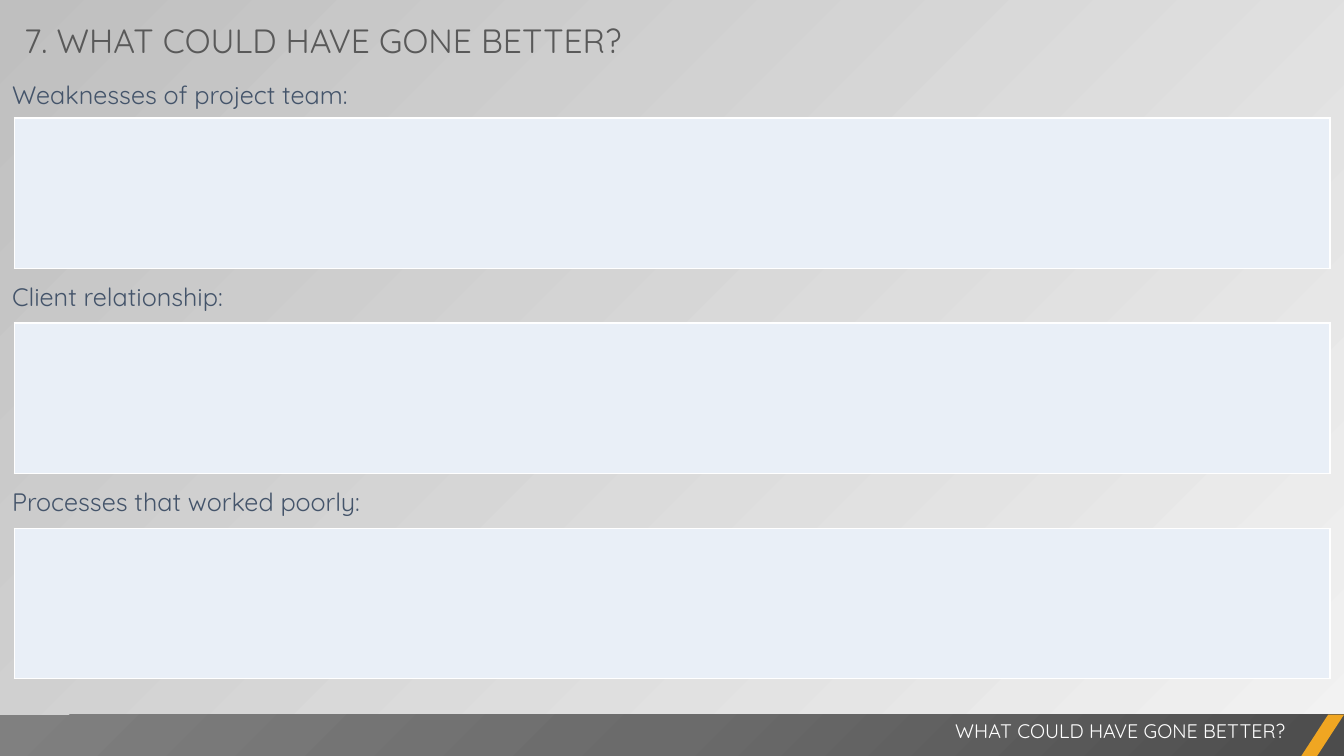
"""Build the project review slide on what could have gone better."""
import pptx
import pptx.dml.color
import pptx.enum.shapes
import pptx.enum.text
import pptx.oxml
import pptx.oxml.ns
import pptx.util
from pptx.util import Inches

RGBColor = pptx.dml.color.RGBColor
Align = pptx.enum.text.PP_ALIGN
Shape = pptx.enum.shapes.MSO_SHAPE

WHITE = RGBColor(0xFF, 0xFF, 0xFF)
LIGHT_GREY = RGBColor(0xF2, 0xF2, 0xF2)
SILVER = RGBColor(0xBF, 0xBF, 0xBF)
TITLE_GREY = RGBColor(0x59, 0x59, 0x59)
LABEL_BLUE = RGBColor(0x44, 0x54, 0x6A)
ANSWER_BLUE = RGBColor(0xE9, 0xEF, 0xF7)
FOOTER_DARK = RGBColor(0x4C, 0x4C, 0x4C)
FOOTER_MIDDLE = RGBColor(0x6B, 0x6B, 0x6B)
FOOTER_LIGHT = RGBColor(0x80, 0x80, 0x80)
ORANGE = RGBColor(0xF0, 0xA6, 0x22)

FONT = "Quicksand"
WIDTH, HEIGHT = 13.33, 7.5
MARGIN = 0.14
FIRST_ROW, ROW_PITCH, ANSWER_HEIGHT = 1.17, 2.035, 1.49
FOOTER_TOP, FOOTER_HEIGHT, ACCENT_WIDTH = 7.09, 0.42, 0.43
SECTIONS = [
    ("Weaknesses of project team:", 0.41, 0.39, 0.9),
    ("Client relationship:", 0.53, 0.48, 1.2),
    ("Processes that worked poorly:", 0.53, 0.48, 1.2),
]


def box(left, top, width, height):
    """Convert a frame in inches to slide lengths."""
    return [Inches(value) for value in (left, top, width, height)]


def set_gradient(fill, start, end):
    """Give a fill a gradient between two colours."""
    fill.gradient()
    for stop, color, position in zip(fill.gradient_stops, (start, end), (0, 1)):
        stop.color.rgb = color
        stop.position = position


def add_text(slide, frame, text, size, color, wrap=True, align=Align.LEFT,
             insets=(0.1, 0.05), spacing=None):
    """Add one line of text in a box that grows with it."""
    text_frame = slide.shapes.add_textbox(*box(*frame)).text_frame
    text_frame.word_wrap = wrap
    text_frame.auto_size = pptx.enum.text.MSO_AUTO_SIZE.SHAPE_TO_FIT_TEXT
    text_frame.margin_left = text_frame.margin_right = Inches(insets[0])
    text_frame.margin_top = text_frame.margin_bottom = Inches(insets[1])
    paragraph = text_frame.paragraphs[0]
    paragraph.alignment = align
    paragraph.line_spacing = spacing
    run = paragraph.add_run()
    run.text = text
    run.font.name = FONT
    run.font.size = pptx.util.Pt(size)
    run.font.color.rgb = color


def add_answer(slide, top):
    """Add a one-cell table for the answer."""
    frame = box(MARGIN, top, WIDTH - 2 * MARGIN, ANSWER_HEIGHT)
    table = slide.shapes.add_table(1, 1, *frame).table
    table.first_row = table.horz_banding = False
    cell = table.cell(0, 0)
    cell.fill.solid()
    cell.fill.fore_color.rgb = ANSWER_BLUE
    properties = cell._tc.get_or_add_tcPr()
    for index, side in enumerate("LRTB"):
        properties.insert(index, pptx.oxml.parse_xml(
            f'<a:ln{side} {pptx.oxml.ns.nsdecls("a")} w="12700"><a:solidFill>'
            f'<a:srgbClr val="{WHITE}"/></a:solidFill></a:ln{side}>'))


def add_section(slide, index, label, rise, height, spacing):
    """Add a label and the answer field below it."""
    top = FIRST_ROW + index * ROW_PITCH
    add_answer(slide, top)
    add_text(slide, (0, top - rise, 7.63, height), label, 18, LABEL_BLUE,
             insets=(0.12, 0.06), spacing=spacing)


def add_plain_shape(slide, kind, left, width):
    """Add a shape without line or shadow in the footer band."""
    shape = slide.shapes.add_shape(
        kind, *box(left, FOOTER_TOP, width, FOOTER_HEIGHT))
    shape.shadow.inherit = False
    shape.line.fill.background()
    return shape


def add_footer(slide, text):
    """Add the shaded band, its caption and the slanted accent."""
    band = add_plain_shape(slide, Shape.RECTANGLE, 0, WIDTH)
    set_gradient(band.fill, FOOTER_DARK, FOOTER_LIGHT)
    namespace = pptx.oxml.ns.nsdecls("a")
    gradient = band._element.spPr.find(pptx.oxml.ns.qn("a:gradFill"))
    stops = gradient.find(pptx.oxml.ns.qn("a:gsLst"))
    stops.insert(1, pptx.oxml.parse_xml(
        f'<a:gs {namespace} pos="50000"><a:srgbClr val="{FOOTER_MIDDLE}"/></a:gs>'))
    gradient.replace(gradient.find(pptx.oxml.ns.qn("a:lin")), pptx.oxml.parse_xml(
        f'<a:path {namespace} path="circle">'
        '<a:fillToRect l="100000" t="100000"/></a:path>'))
    add_text(slide, (5.25, 7.08, 7.6, 0.34), text, 14, WHITE, align=Align.RIGHT)
    accent = add_plain_shape(
        slide, Shape.PARALLELOGRAM, WIDTH - ACCENT_WIDTH, ACCENT_WIDTH)
    accent.adjustments[0] = 0.65
    accent.fill.solid()
    accent.fill.fore_color.rgb = ORANGE


def main():
    """Build and save the slide."""
    presentation = pptx.Presentation()
    presentation.slide_width = Inches(WIDTH)
    presentation.slide_height = Inches(HEIGHT)
    slide = presentation.slides.add_slide(presentation.slide_layouts[6])
    set_gradient(slide.background.fill, LIGHT_GREY, SILVER)
    slide.background.fill.gradient_angle = 135
    for index, section in enumerate(SECTIONS):
        add_section(slide, index, *section)
    add_text(slide, (MARGIN, 0.15, 6.24, 0.5),
             "7. WHAT COULD HAVE GONE BETTER?", 24, TITLE_GREY, wrap=False)
    add_footer(slide, "WHAT COULD HAVE GONE BETTER?")
    presentation.save("out.pptx")


if __name__ == "__main__":
    main()
